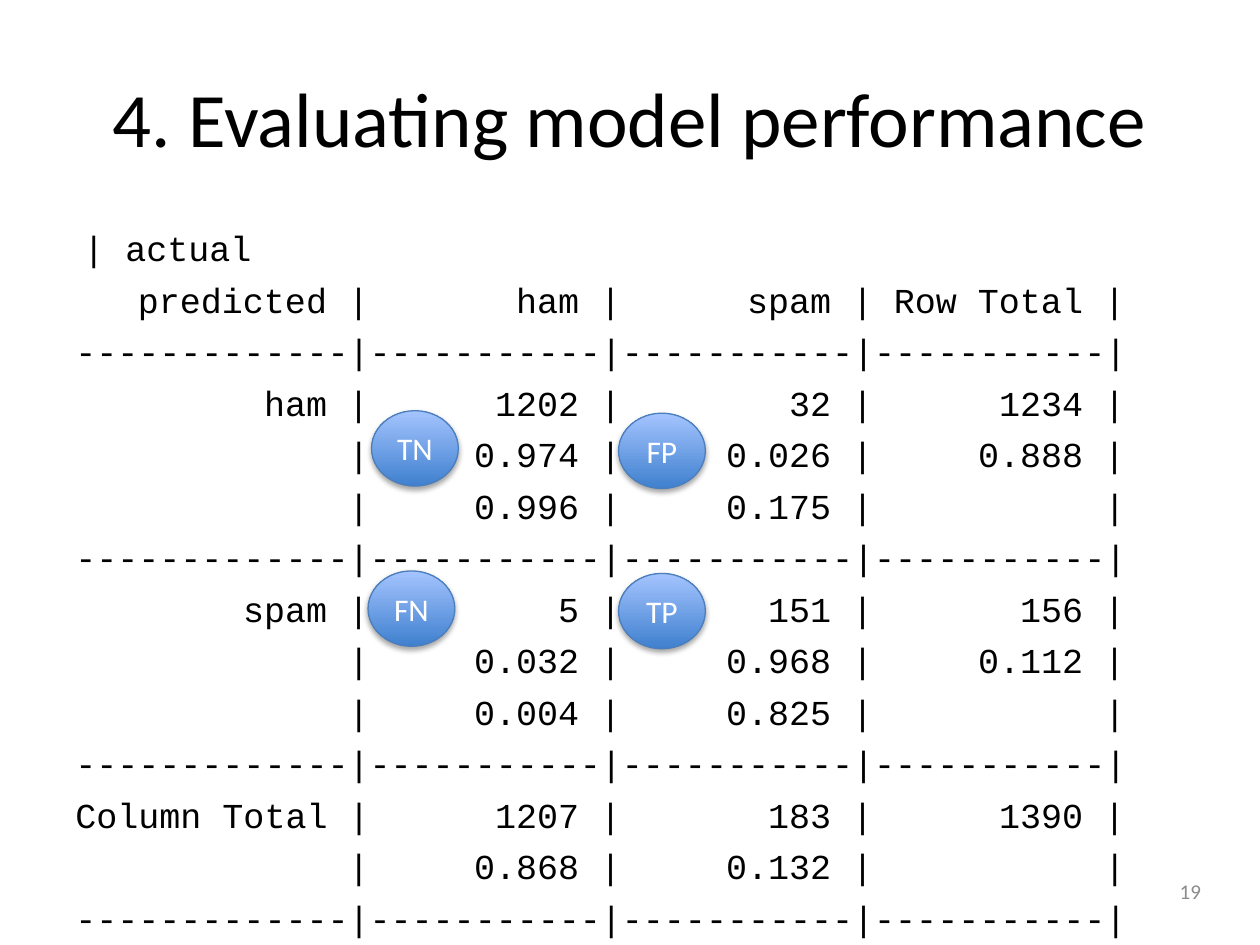
from typing import NamedTuple

from lxml.etree import SubElement
from pptx import Presentation
from pptx.dml.color import RGBColor
from pptx.enum.shapes import MSO_SHAPE
from pptx.enum.text import MSO_ANCHOR, PP_ALIGN
from pptx.oxml.ns import qn
from pptx.util import Cm, Pt

BODY_SIZE = 20
CHARACTER_WIDTH = Pt(BODY_SIZE * 0.6)
LABEL_WIDTH = 12
COLUMN_ENDS = (14, 26, 38, 50)
RULE = "|".join("-" * width for width in (13, 11, 11, 11)) + "|"


class Badge(NamedTuple):
    text: str
    left: float
    top: float


BADGES = (
    Badge("TN", 7.49, 8.28),
    Badge("FN", 7.42, 11.51),
    Badge("FP", 12.47, 8.33),
    Badge("TP", 12.47, 11.56),
)

# Each row holds a label and three values; None stands for a dashed rule.
ROWS = (
    ("predicted", "ham", "spam", "Row Total"),
    None,
    ("ham", "1202", "32", "1234"),
    ("", "0.974", "0.026", "0.888"),
    ("", "0.996", "0.175", ""),
    None,
    ("spam", "5", "151", "156"),
    ("", "0.032", "0.968", "0.112"),
    ("", "0.004", "0.825", ""),
    None,
    ("Column Total", "1207", "183", "1390"),
    ("", "0.868", "0.132", ""),
    None,
)


def color(value: str) -> RGBColor:
    return RGBColor.from_string(value)


def add_run(paragraph, text: str, *, size: float, font: str = "Calibri",
            fill: str = "000000", align=PP_ALIGN.LEFT) -> None:
    paragraph.alignment = align
    run = paragraph.add_run()
    run.text = text
    run.font.size = Pt(size)
    run.font.name = font
    run.font.color.rgb = color(fill)


def add_frame(slide, left: float, top: float, width: float, height: float,
              anchor=MSO_ANCHOR.MIDDLE):
    """Add a wrapping text box, measured in centimetres, and return its text frame."""
    box = slide.shapes.add_textbox(Cm(left), Cm(top), Cm(width), Cm(height))
    box.text_frame.word_wrap = True
    box.text_frame.vertical_anchor = anchor
    return box.text_frame


def add_column_stops(paragraph) -> None:
    """Right-align each cell, with its closing bar, at a column end."""
    stops = SubElement(paragraph._p.get_or_add_pPr(), qn("a:tabLst"))
    for end in COLUMN_ENDS:
        SubElement(stops, qn("a:tab"), pos=str(end * CHARACTER_WIDTH), algn="r")


def row_text(row: tuple[str, ...] | None) -> str:
    if row is None:
        return RULE
    text = "\t".join(f"{cell} |" if cell else "|" for cell in row)
    return text if len(row[0]) == LABEL_WIDTH else "\t" + text


def add_confusion_matrix(slide) -> None:
    frame = add_frame(slide, 1.27, 4.45, 22.86, 12.57, MSO_ANCHOR.TOP)
    heading = frame.paragraphs[0]
    add_run(heading, " ", size=BODY_SIZE)
    add_run(heading, "| actual", size=BODY_SIZE, font="Courier New")
    for row in ROWS:
        paragraph = frame.add_paragraph()
        paragraph.space_before = Pt(5.4)
        add_run(paragraph, row_text(row), size=BODY_SIZE, font="Courier New")
        if row:
            add_column_stops(paragraph)


def add_shadow(shape) -> None:
    shape.shadow.inherit = False
    effects = shape._element.spPr.find(qn("a:effectLst"))
    shadow = SubElement(effects, qn("a:outerShdw"), blurRad=str(Pt(3.1)),
                        dist=str(Pt(1.8)), dir="5400000", rotWithShape="0")
    shade = SubElement(shadow, qn("a:srgbClr"), val="000000")
    SubElement(shade, qn("a:alpha"), val="35000")


def add_badge(slide, badge: Badge) -> None:
    shape = slide.shapes.add_shape(MSO_SHAPE.OVAL, Cm(badge.left), Cm(badge.top),
                                   Cm(1.75), Cm(1.52))
    shape.fill.gradient()
    shape.fill.gradient_angle = 90
    for stop, value in zip(shape.fill.gradient_stops, ("3F80CE", "A4C4FF")):
        stop.color.rgb = color(value)
    shape.line.color.rgb = color("4B7EBC")
    shape.line.width = Pt(0.75)
    add_shadow(shape)
    frame = shape.text_frame
    frame.word_wrap = False
    frame.vertical_anchor = MSO_ANCHOR.MIDDLE
    add_run(frame.paragraphs[0], badge.text, size=18, fill="FFFFFF",
            align=PP_ALIGN.CENTER)


def main() -> None:
    presentation = Presentation()
    presentation.slide_width = Cm(25.4)
    presentation.slide_height = Cm(19.05)
    slide = presentation.slides.add_slide(presentation.slide_layouts[6])

    number = add_frame(slide, 18.54, 17.45, 5.92, 1.02)
    add_run(number.paragraphs[0], "19", size=12, fill="8C8C8C", align=PP_ALIGN.RIGHT)
    title = add_frame(slide, 1.27, 0.76, 22.86, 3.18)
    add_run(title.paragraphs[0], "4. Evaluating model performance", size=44,
            align=PP_ALIGN.CENTER)
    add_confusion_matrix(slide)
    for badge in BADGES:
        add_badge(slide, badge)

    presentation.save("out.pptx")


if __name__ == "__main__":
    main()
